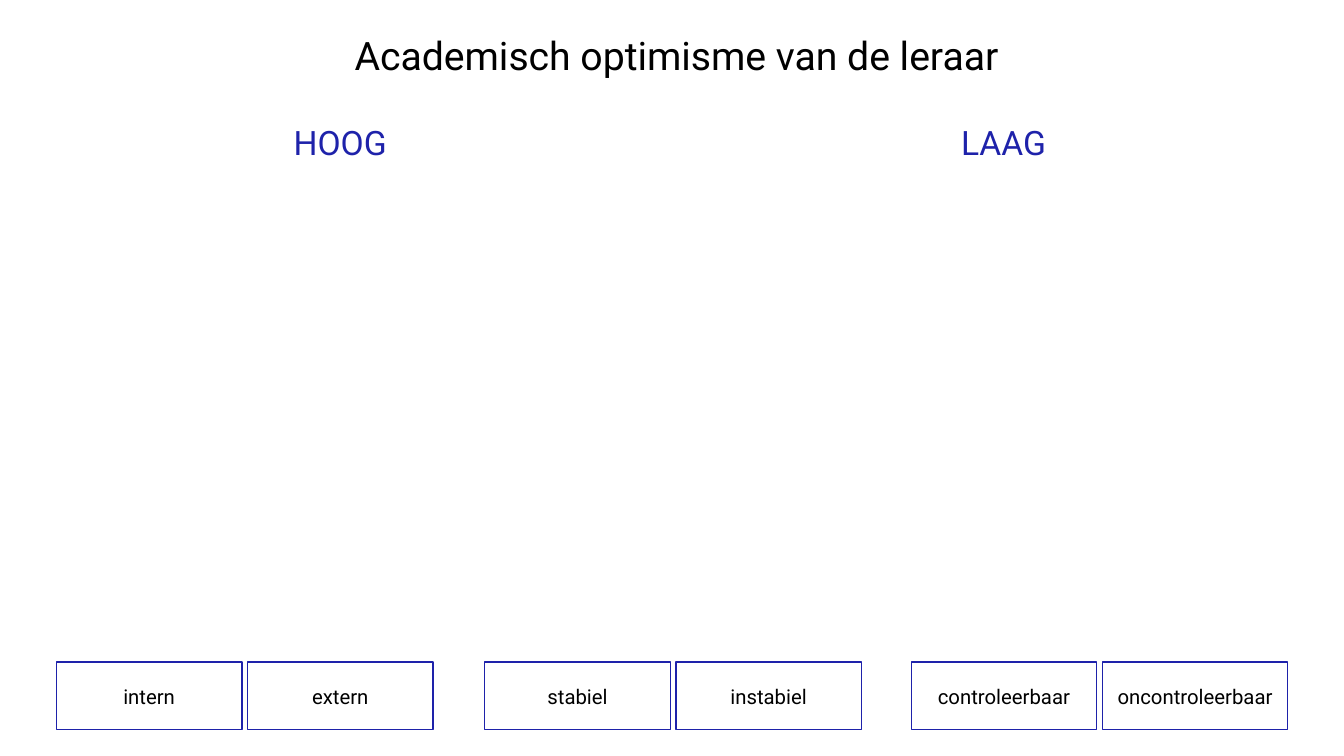
from dataclasses import dataclass

from lxml import etree
from pptx import Presentation
from pptx import util as u
from pptx.dml.color import RGBColor
from pptx.enum import shapes, text
from pptx.oxml.ns import qn

FONT = "Roboto"
BLUE, BLACK, WHITE = "1E22AA", "000000", "FFFFFF"


@dataclass
class Box:
    label: str
    left: float
    top: float
    width: float
    height: float
    size: float
    color: str
    line: str
    opacity: int = 100  # percent


def rgb(value: str) -> RGBColor:
    return RGBColor.from_string(value)


def write(tf, label: str, size: float, color: str) -> None:
    tf.word_wrap = True
    tf.text = label
    p = tf.paragraphs[0]
    p.alignment = text.PP_ALIGN.CENTER
    r = p.runs[0]
    r.font.name = FONT
    r.font.size = u.Pt(size)
    r.font.color.rgb = rgb(color)


def draw_box(s, box: Box) -> None:
    sp = s.shapes.add_shape(
        shapes.MSO_SHAPE.RECTANGLE,
        u.Pt(box.left), u.Pt(box.top), u.Pt(box.width), u.Pt(box.height))
    sp.shadow.inherit = False
    sp.fill.solid()
    sp.fill.fore_color.rgb = rgb(WHITE)
    if box.opacity < 100:
        clr = sp._element.spPr.find(qn("a:solidFill")).find(qn("a:srgbClr"))
        etree.SubElement(clr, qn("a:alpha")).set("val", str(box.opacity * 1000))
    sp.line.color.rgb = rgb(box.line)
    sp.line.width = u.Pt(1)
    sp.text_frame.vertical_anchor = text.MSO_ANCHOR.MIDDLE
    write(sp.text_frame, box.label, box.size, box.color)


def draw_title(s, label: str) -> None:
    sp = s.shapes.add_textbox(u.Pt(217.5), u.Pt(18.7), u.Pt(531.4), u.Pt(41))
    sp.text_frame.auto_size = text.MSO_AUTO_SIZE.SHAPE_TO_FIT_TEXT
    write(sp.text_frame, label, 28, BLACK)


def main() -> None:
    prs = Presentation()
    prs.slide_width, prs.slide_height = u.Pt(960), u.Pt(540)
    s = prs.slides.add_slide(prs.slide_layouts[6])

    # Column headings
    for label, left in (("HOOG", 172.8), ("LAAG", 646.6)):
        draw_box(s, Box(label, left, 69.1, 140.4, 64.8, 24, BLUE, WHITE))

    draw_title(s, "Academisch optimisme van de leraar")

    # Pairs of opposites along the bottom
    pairs = (
        (40.3, ("intern", "extern")),
        (346.3, ("stabiel", "instabiel")),
        (650.9, ("controleerbaar", "oncontroleerbaar")),
    )
    step = 136.5
    for left, labels in pairs:
        for i, label in enumerate(labels):
            opacity = 50 if label == "instabiel" else 100
            draw_box(s, Box(label, left + i * step, 473, 132.5, 48.2,
                            14.5, BLACK, BLUE, opacity))

    prs.save("out.pptx")


if __name__ == "__main__":
    main()
